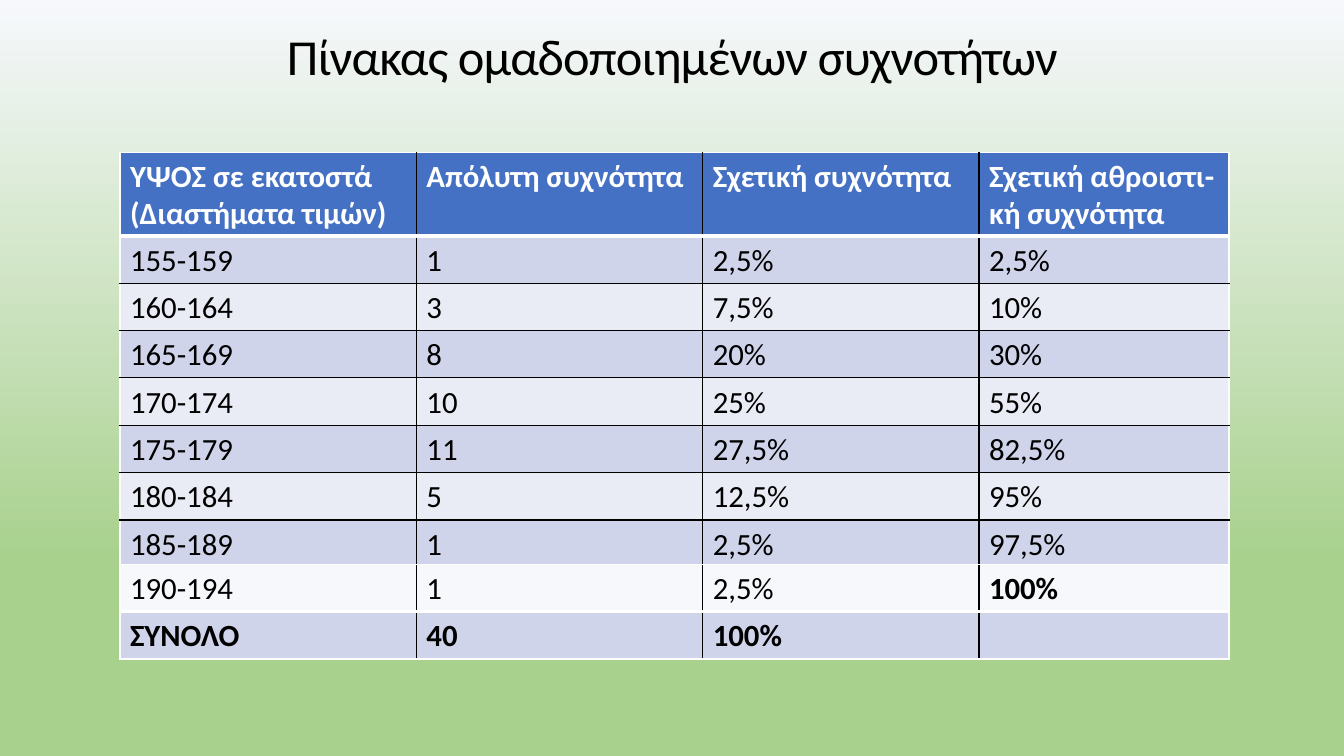
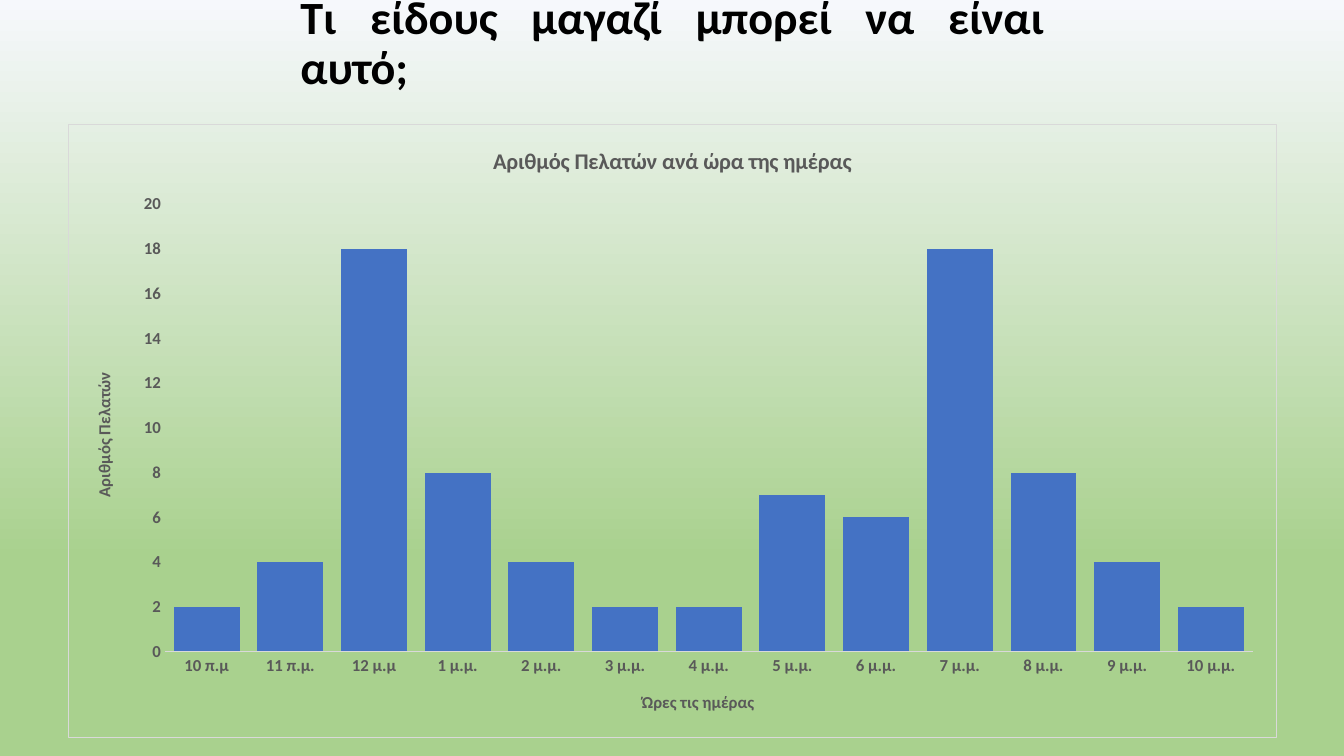
from dataclasses import dataclass
from typing import NamedTuple

from lxml import etree
from pptx import Presentation
from pptx.chart.data import CategoryChartData
from pptx.dml.color import RGBColor
from pptx.enum import chart as ch, text as tx
from pptx.oxml import parse_xml
from pptx.oxml.ns import nsdecls, qn
from pptx.util import Inches, Pt


@dataclass(frozen=True)
class Theme:
    font: str = "Calibri"
    ink: str = "000000"
    white: str = "FFFFFF"
    sky: str = "F6F8FC"
    grass: str = "A9D18E"
    head: str = "4471C4"
    odd: str = "CFD4EA"
    even: str = "E9EBF5"
    pale: str = "F6F8FB"
    bar: str = "4472C4"
    gray: str = "595959"
    rule: str = "D9D9D9"
    cell: float = 22
    label: float = 12
    caption: float = 16


class Title(NamedTuple):
    text: str
    box: tuple[float, float, float, float]
    size: float
    align: tx.PP_ALIGN
    bold: bool = False
    inset: tuple[float, float] = (0, 0)
    track: int = 0
    lead: float = 1.0


class Edge(NamedTuple):
    color: str
    width: float


T = Theme()
THIN = Edge(T.white, 1)
THICK = Edge(T.white, 3)
DARK = Edge(T.ink, 1)

TABLE = Title("Πίνακας ομαδοποιημένων συχνοτήτων", (2.69, 0.23, 7.96, 0.63),
              36, tx.PP_ALIGN.CENTER, track=-60)
SHOP = Title("Τι είδους μαγαζί μπορεί να είναι αυτό;", (2.88, 0.1, 7.58, 0.69),
             33, tx.PP_ALIGN.JUSTIFY, bold=True, inset=(0.1, 0.05), lead=0.9)

ROWS = [
    ("ΥΨΟΣ σε εκατοστά\n(Διαστήματα τιμών)", "Απόλυτη συχνότητα",
     "Σχετική συχνότητα", "Σχετική αθροιστι-\nκή συχνότητα"),
    ("155-159", "1", "2,5%", "2,5%"),
    ("160-164", "3", "7,5%", "10%"),
    ("165-169", "8", "20%", "30%"),
    ("170-174", "10", "25%", "55%"),
    ("175-179", "11", "27,5%", "82,5%"),
    ("180-184", "5", "12,5%", "95%"),
    ("185-189", "1", "2,5%", "97,5%"),
    ("190-194", "1", "2,5%", "100%"),
    ("ΣΥΝΟΛΟ", "40", "100%", ""),
]
WIDTHS = [2.94, 2.84, 2.74, 2.48]
HEIGHTS = [0.83] + [0.47] * 6 + [0.44] + [0.47] * 2
FILLS = [T.head] + [T.odd, T.even] * 3 + [T.odd, T.pale, T.odd]
ACROSS = [THIN, THICK] + [DARK] * 6 + [THIN, THICK, THIN]
DOWN = [THIN] + [DARK] * 3 + [THIN]

HOURS = ["10 π.μ", "11 π.μ.", "12 μ.μ"] + [f"{hour} μ.μ." for hour in range(1, 11)]
GUESTS = [2, 4, 18, 8, 4, 2, 2, 7, 6, 18, 8, 4, 2]
PLOT = {"x": 0.08, "y": 0.13, "w": 0.9, "h": 0.73}


def rgb(code: str) -> RGBColor:
    return RGBColor.from_string(code)


def style(font, size: float, color: str, bold: bool = False) -> None:
    font.name, font.size, font.bold = T.font, Pt(size), bold
    font.color.rgb = rgb(color)


def paint(master) -> None:
    """Give every slide the gradient background."""
    fill = master.background.fill
    fill.gradient()
    fill.gradient_angle = 270
    for stop, color, place in zip(fill.gradient_stops, (T.sky, T.grass), (0, 0.74)):
        stop.color.rgb, stop.position = rgb(color), place


def add_title(slide, title: Title) -> None:
    frame = slide.shapes.add_textbox(*map(Inches, title.box)).text_frame
    frame.word_wrap = True
    frame.vertical_anchor = tx.MSO_ANCHOR.MIDDLE
    frame.margin_left = frame.margin_right = Inches(title.inset[0])
    frame.margin_top = frame.margin_bottom = Inches(title.inset[1])
    line = frame.paragraphs[0]
    line.alignment, line.line_spacing = title.align, title.lead
    run = line.add_run()
    run.text = title.text
    style(line.font, title.size, T.ink, title.bold)
    if title.track:
        run.font._element.set("spc", str(title.track))


def edge_cell(cell, edges: dict[str, Edge]) -> None:
    """Put border lines ahead of the cell fill, as the schema asks."""
    props = cell._tc.get_or_add_tcPr()
    for spot, (side, edge) in enumerate(edges.items()):
        props.insert(spot, parse_xml(
            f'<a:ln{side} {nsdecls("a")} w="{Pt(edge.width)}"><a:solidFill>'
            f'<a:srgbClr val="{edge.color}"/></a:solidFill></a:ln{side}>'))


def add_grid(slide) -> None:
    table = slide.shapes.add_table(
        len(ROWS), len(WIDTHS), Inches(1.19), Inches(1.51),
        Inches(sum(WIDTHS)), Inches(sum(HEIGHTS))).table
    for col, width in zip(table.columns, WIDTHS):
        col.width = Inches(width)
    for r, words in enumerate(ROWS):
        table.rows[r].height = Inches(HEIGHTS[r])
        for c, word in enumerate(words):
            cell = table.cell(r, c)
            cell.margin_left, cell.margin_top = Inches(0.1), Inches(0.06)
            cell.margin_right = cell.margin_bottom = 0
            cell.fill.solid()
            cell.fill.fore_color.rgb = rgb(FILLS[r])
            edge_cell(cell, {"L": DOWN[c], "R": DOWN[c + 1],
                             "T": ACROSS[r], "B": ACROSS[r + 1]})
            cell.text = word
            bold = r in (0, len(ROWS) - 1) or (r, word) == (len(ROWS) - 2, "100%")
            for line in cell.text_frame.paragraphs:
                style(line.font, T.cell, T.ink if r else T.white, bold)


def set_label(owner, text: str, size: float) -> None:
    """Title a chart or an axis."""
    frame = owner.text_frame
    frame.text = text
    style(frame.paragraphs[0].font, size, T.gray, True)


def frame_chart(chart) -> None:
    """Outline the chart and fix the place of its plot."""
    chart.font._element.getparent()
    space = chart._chartSpace
    space.find(qn("c:txPr")).addprevious(parse_xml(
        f'<c:spPr {nsdecls("c", "a")}><a:noFill/><a:ln w="{Pt(0.75)}"><a:solidFill>'
        f'<a:srgbClr val="{T.rule}"/></a:solidFill></a:ln></c:spPr>'))
    area = space.chart.plotArea
    for old in area.findall(qn("c:layout")):
        area.remove(old)
    layout = etree.Element(qn("c:layout"))
    manual = etree.SubElement(layout, qn("c:manualLayout"))
    parts = {"layoutTarget": "inner", "xMode": "edge", "yMode": "edge", **PLOT}
    for name, value in parts.items():
        etree.SubElement(manual, qn(f"c:{name}")).set("val", str(value))
    area.insert(0, layout)


def add_bars(slide) -> None:
    data = CategoryChartData()
    data.categories = HOURS
    data.add_series("Series 1", GUESTS)
    chart = slide.shapes.add_chart(
        ch.XL_CHART_TYPE.COLUMN_CLUSTERED, Inches(0.67), Inches(1.23),
        Inches(12), Inches(6.09), data).chart
    style(chart.font, 10, T.ink)
    chart.has_legend = False
    set_label(chart.chart_title, "Αριθμός Πελατών ανά ώρα της ημέρας", T.caption)
    axes = ((chart.category_axis, "Ώρες τις ημέρας"),
            (chart.value_axis, "Αριθμός Πελατών"))
    for axis, name in axes:
        set_label(axis.axis_title, name, T.label)
        style(axis.tick_labels.font, T.label, T.gray, True)
        axis.has_major_gridlines = False
        axis.major_tick_mark = axis.minor_tick_mark = ch.XL_TICK_MARK.NONE
    base = chart.category_axis.format.line
    base.color.rgb, base.width = rgb(T.rule), Pt(0.75)
    scale = chart.value_axis
    scale.format.line.fill.background()
    scale.minimum_scale, scale.maximum_scale, scale.major_unit = 0, 20, 2
    plot = chart.plots[0]
    plot.gap_width, plot.overlap, plot.vary_by_categories = 27, -27, False
    fill = plot.series[0].format.fill
    fill.solid()
    fill.fore_color.rgb = rgb(T.bar)
    frame_chart(chart)


def main() -> None:
    deck = Presentation()
    deck.slide_width, deck.slide_height = Inches(13.33), Inches(7.5)
    paint(deck.slide_master)
    for title, draw in ((TABLE, add_grid), (SHOP, add_bars)):
        slide = deck.slides.add_slide(deck.slide_layouts[6])
        add_title(slide, title)
        draw(slide)
    deck.save("out.pptx")


if __name__ == "__main__":
    main()
